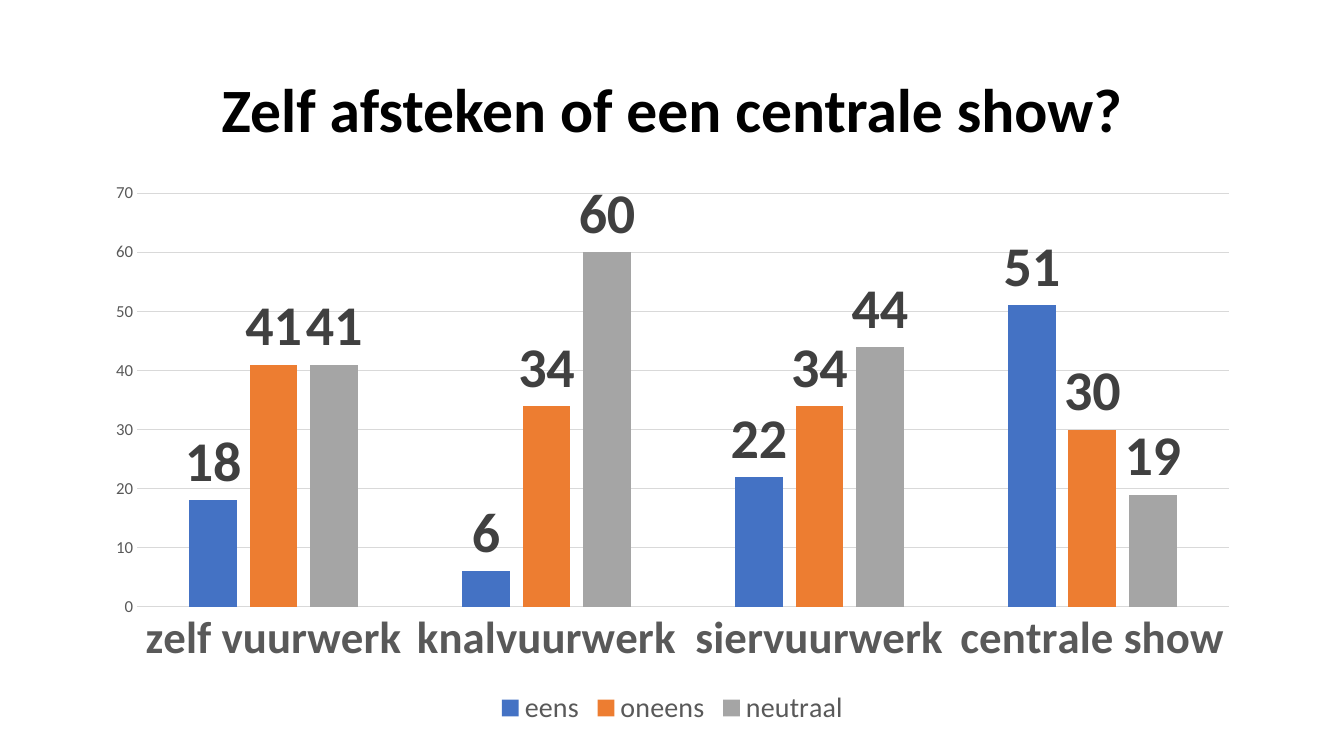
"""Build a slide with a clustered column chart on firework opinions."""
from pptx import Presentation
from pptx.chart.data import CategoryChartData
from pptx.dml.color import RGBColor
from pptx.enum import chart as kinds, text
from pptx.util import Pt

PX = 914400 / 100.8
FONT = "Calibri"
HUES = {"title": "000000", "label": "404040", "axis": "595959", "grid": "D9D9D9",
        "eens": "4472C4", "oneens": "ED7D31", "neutraal": "A5A5A5"}
VOTES = {"eens": (18, 6, 22, 51),
         "oneens": (41, 34, 34, 30),
         "neutraal": (41, 60, 44, 19)}


def px(*nums):
    return [round(n * PX) for n in nums]


def style(font, size, hue, bold=False):
    font.name, font.size, font.bold = FONT, Pt(size), bold
    font.color.rgb = RGBColor.from_string(HUES[hue])


deck = Presentation()
deck.slide_width, deck.slide_height = px(1344, 756)
slide = deck.slides.add_slide(deck.slide_layouts[5])

title = slide.shapes.title
title.left, title.top, title.width, title.height = px(93, 40, 1159, 146)
frame = title.text_frame
frame.text = "Zelf afsteken of een centrale show?"
frame.vertical_anchor = text.MSO_ANCHOR.MIDDLE
line = frame.paragraphs[0]
line.alignment = text.PP_ALIGN.CENTER
line.line_spacing = 0.9
style(line.runs[0].font, 44, "title", True)

data = CategoryChartData()
data.categories = ["zelf vuurwerk", "knalvuurwerk", "siervuurwerk", "centrale show"]
for name, votes in VOTES.items():
    data.add_series(name, votes)
chart = slide.shapes.add_chart(
    kinds.XL_CHART_TYPE.COLUMN_CLUSTERED, *px(93, 172, 1159, 559), data).chart
style(chart.font, 10, "title")
chart.has_title = False
chart.has_legend = True
chart.legend.position = kinds.XL_LEGEND_POSITION.BOTTOM
chart.legend.include_in_layout = False
style(chart.legend.font, 20, "axis")

cats, vals = chart.category_axis, chart.value_axis
for axis, size, bold in ((cats, 32, True), (vals, 12, False)):
    axis.major_tick_mark = axis.minor_tick_mark = kinds.XL_TICK_MARK.NONE
    style(axis.tick_labels.font, size, "axis", bold)
vals.minimum_scale, vals.maximum_scale, vals.major_unit = 0, 70, 10
vals.format.line.fill.background()
for rule in (cats.format.line, vals.major_gridlines.format.line):
    rule.color.rgb = RGBColor.from_string(HUES["grid"])
    rule.width = Pt(0.75)

plot = chart.plots[0]
plot.gap_width, plot.overlap = 219, -27
plot.vary_by_categories = False
for bars in plot.series:
    bars.format.fill.solid()
    bars.format.fill.fore_color.rgb = RGBColor.from_string(HUES[bars.name])
    tags = bars.data_labels
    tags.show_value = True
    tags.position = kinds.XL_LABEL_POSITION.OUTSIDE_END
    style(tags.font, 40, "label", True)

deck.save("out.pptx")
